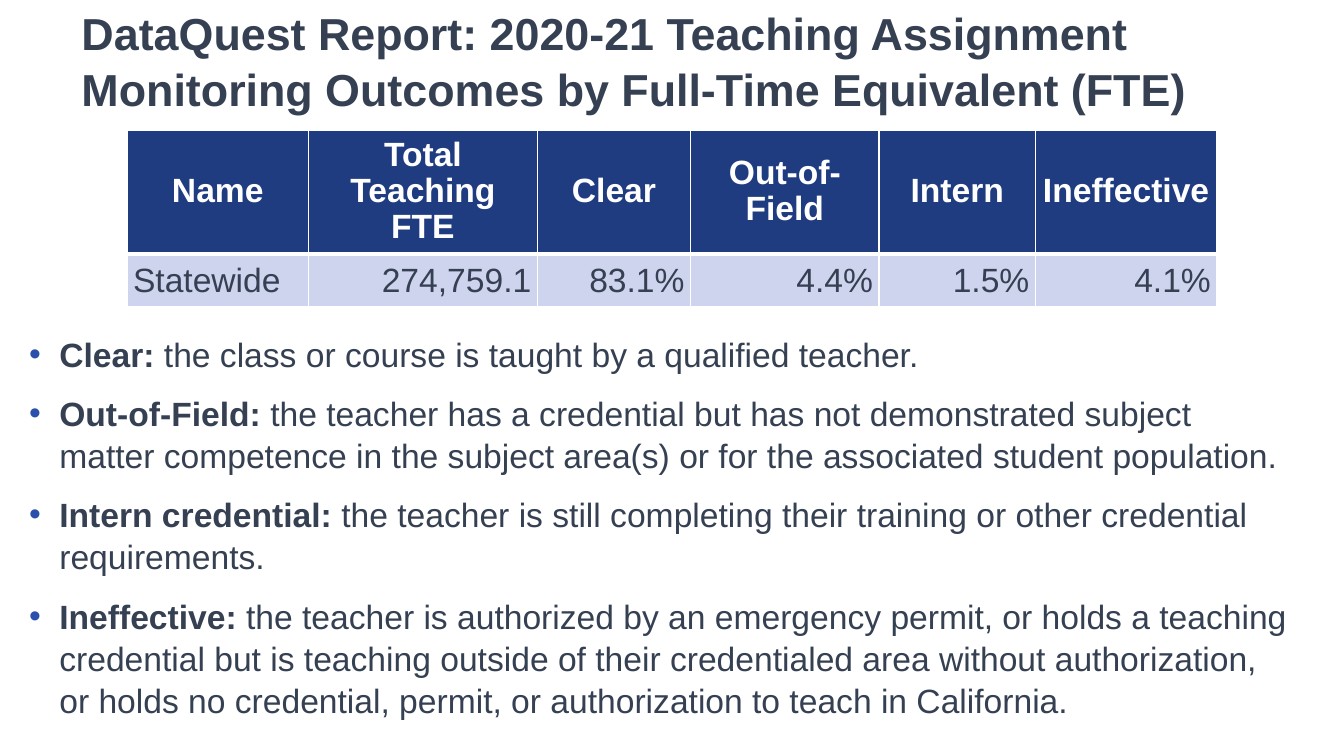
from lxml import etree
from pptx import Presentation
from pptx import util as u
from pptx.dml.color import RGBColor
from pptx.enum import text
from pptx.oxml import ns

# Content
TITLE = "DataQuest Report: 2020-21 Teaching Assignment Monitoring Outcomes by Full-Time Equivalent (FTE)"
COLUMNS = [  # heading, statewide value, width in inches
    ("Name", "Statewide", 1.8),
    ("Total\nTeaching\nFTE", "274,759.1", 2.27),
    ("Clear", "83.1%", 1.52),
    ("Out-of-Field", "4.4%", 1.87),
    ("Intern", "1.5%", 1.55),
    ("Ineffective", "4.1%", 1.8),
]
DEFINITIONS = [
    ("Clear: ", "the class or course is taught by a qualified teacher. "),
    ("Out-of-Field: ", "the teacher has a credential but has not demonstrated subject matter "
     "competence in the subject area(s) or for the associated student population."),
    ("Intern credential: ", "the teacher is still completing their training or other credential "
     "requirements."),
    ("Ineffective: ", "the teacher is authorized by an emergency permit, or holds a teaching "
     "credential but is teaching outside of their credentialed area without authorization, "
     "or holds no credential, permit, or authorization to teach in California."),
]

# Style and layout
COLORS = {"ink": "354052", "white": "FFFFFF", "header": "203C81", "row": "CFD4EE", "bullet": "2B50AC"}
FONT = "Arial"
TITLE_SIZE, TEXT_SIZE = 32, 24
LINE_SPACING, HEADER_SPACING = 1.05, 0.96
SLIDE_SIZE = (13.33, 7.5)
TITLE_BOX = (0.71, 0, 11.88, 1.18)
TABLE_ORIGIN = (1.26, 1.29)
ROW_HEIGHTS = (1.18, 0.51)
BODY_BOX = (0.09, 3.24, 12.81, 4.2)
THIN, THICK = 1, 3


def inches(values):
    return [u.Inches(value) for value in values]


def add_run(paragraph, words, size, color, bold):
    run = paragraph.add_run()
    run.text = words
    run.font.name = FONT
    run.font.size = u.Pt(size)
    run.font.bold = bold
    run.font.color.rgb = RGBColor.from_string(COLORS[color])


def add_text_box(slide, box, anchor):
    frame = slide.shapes.add_textbox(*inches(box)).text_frame
    frame.word_wrap = True
    frame.vertical_anchor = anchor
    return frame


def add_bullet(paragraph):
    properties = paragraph._p.get_or_add_pPr()
    properties.set("marL", str(u.Inches(0.4)))
    properties.set("indent", str(u.Inches(-0.3)))
    color = etree.SubElement(properties, ns.qn("a:buClr"))
    etree.SubElement(color, ns.qn("a:srgbClr"), val=COLORS["bullet"])
    etree.SubElement(properties, ns.qn("a:buFont"), typeface=FONT)
    etree.SubElement(properties, ns.qn("a:buChar"), char="•")


def add_borders(cell, top, bottom):
    properties = cell._tc.get_or_add_tcPr()
    for side, width in (("L", THIN), ("R", THIN), ("T", top), ("B", bottom)):
        line = etree.SubElement(properties, ns.qn(f"a:ln{side}"), w=str(u.Pt(width)))
        fill = etree.SubElement(line, ns.qn("a:solidFill"))
        etree.SubElement(fill, ns.qn("a:srgbClr"), val=COLORS["white"])


def fill_cell(cell, words, is_header, alignment):
    # Borders come before the fill in the cell's properties
    add_borders(cell, *((THIN, THICK) if is_header else (THICK, THIN)))
    cell.fill.solid()
    cell.fill.fore_color.rgb = RGBColor.from_string(COLORS["header" if is_header else "row"])
    cell.vertical_anchor = text.MSO_ANCHOR.MIDDLE
    margin = u.Inches(0.04 if is_header else 0.06)
    cell.margin_left = cell.margin_right = cell.margin_top = cell.margin_bottom = margin
    paragraph = cell.text_frame.paragraphs[0]
    paragraph.alignment = alignment
    paragraph.line_spacing = HEADER_SPACING if is_header else 1.0
    for index, line in enumerate(words.split("\n")):
        if index:
            paragraph.add_line_break()
        add_run(paragraph, line, TEXT_SIZE, "white" if is_header else "ink", is_header)


def add_title(slide):
    paragraph = add_text_box(slide, TITLE_BOX, text.MSO_ANCHOR.MIDDLE).paragraphs[0]
    paragraph.line_spacing = LINE_SPACING
    add_run(paragraph, TITLE, TITLE_SIZE, "ink", True)


def add_outcomes_table(slide):
    size = (sum(width for _, _, width in COLUMNS), sum(ROW_HEIGHTS))
    table = slide.shapes.add_table(
        len(ROW_HEIGHTS), len(COLUMNS), *inches(TABLE_ORIGIN + size)).table
    for row, height in zip(table.rows, ROW_HEIGHTS):
        row.height = u.Inches(height)
    for index, (heading, value, width) in enumerate(COLUMNS):
        table.columns[index].width = u.Inches(width)
        fill_cell(table.cell(0, index), heading, True, text.PP_ALIGN.CENTER)
        fill_cell(table.cell(1, index), value, False,
                  text.PP_ALIGN.RIGHT if index else text.PP_ALIGN.LEFT)


def add_definitions(slide):
    frame = add_text_box(slide, BODY_BOX, text.MSO_ANCHOR.TOP)
    for index, (term, meaning) in enumerate(DEFINITIONS):
        paragraph = frame.add_paragraph() if index else frame.paragraphs[0]
        add_bullet(paragraph)
        paragraph.line_spacing = LINE_SPACING
        paragraph.space_before = u.Pt(6 if index else 0)
        paragraph.space_after = u.Pt(6)
        add_run(paragraph, term, TEXT_SIZE, "ink", True)
        add_run(paragraph, meaning, TEXT_SIZE, "ink", False)


def main():
    presentation = Presentation()
    presentation.slide_width, presentation.slide_height = inches(SLIDE_SIZE)
    slide = presentation.slides.add_slide(presentation.slide_layouts[6])
    add_title(slide)
    add_outcomes_table(slide)
    add_definitions(slide)
    presentation.save("out.pptx")


if __name__ == "__main__":
    main()
